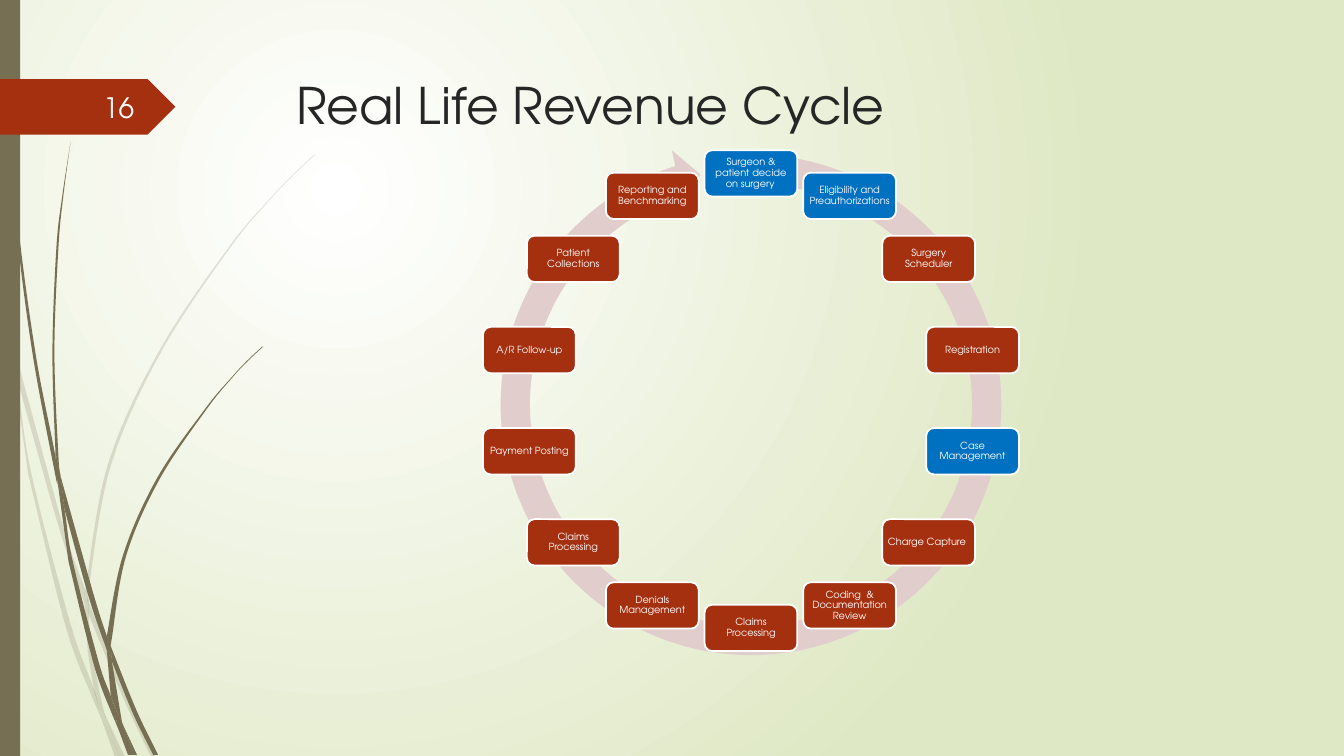
from dataclasses import dataclass
from math import cos, pi, sin

from lxml import etree
from pptx import Presentation
from pptx.dml.color import RGBColor
from pptx.enum.shapes import MSO_SHAPE
from pptx.enum.text import MSO_ANCHOR, PP_ALIGN
from pptx.oxml.ns import qn
from pptx.util import Inches, Pt

RECTANGLE, ROUNDED = MSO_SHAPE.RECTANGLE, MSO_SHAPE.ROUNDED_RECTANGLE
PENTAGON, CIRCULAR_ARROW = MSO_SHAPE.PENTAGON, MSO_SHAPE.CIRCULAR_ARROW
TOP, MIDDLE = MSO_ANCHOR.TOP, MSO_ANCHOR.MIDDLE
LEFT, CENTER, RIGHT = PP_ALIGN.LEFT, PP_ALIGN.CENTER, PP_ALIGN.RIGHT

# Every length is counted in square grid cells.
CELL = Inches(0.1)
COLUMNS, ROWS = 133.33, 75

FONT = "TeX Gyre Adventor"
OLIVE, RUST, BLUE, WHITE = "766F54", "A53010", "0070C0", "FFFFFF"
INK, PALE_ROSE, PALE_GREEN, OFF_WHITE = "262626", "E1CDCC", "DFE8C4", "FEFFFF"

CYCLE_CENTER = (74.5, 39.75)
CYCLE_RADIUS = 22.55
STEP_WIDTH, STEP_HEIGHT = 9.2, 4.6
ARROW_SIZE = 52.9
ARROW_PERCENTS = (5.5, 330.7, 15125.1, 16607.9, 5.8)

Points = tuple[tuple[float, float], ...]


@dataclass(frozen=True)
class Area:
    left: float
    top: float
    width: float
    height: float

    def emu(self) -> list[int]:
        return [cells(n) for n in (self.left, self.top, self.width, self.height)]


@dataclass(frozen=True)
class TextStyle:
    size: float
    color: str
    align: PP_ALIGN = CENTER
    anchor: MSO_ANCHOR = MIDDLE
    inset: tuple[float, float] = (1, 0.5)
    spacing: float = 1.0


@dataclass(frozen=True)
class Blade:
    """A piece of grass between two smooth edges, one out and one back."""
    out: Points
    back: Points


STEP_STYLE = TextStyle(7, WHITE, inset=(0.33, 0.3), spacing=0.9)
TITLE_STYLE = TextStyle(36, INK, LEFT, TOP)
NUMBER_STYLE = TextStyle(20, OFF_WHITE, RIGHT)

STEPS = ("Surgeon & patient decide on surgery\t", "Eligibility and Preauthorizations",
         "Surgery Scheduler", "Registration", "Case Management", "Charge Capture\t",
         "Coding  & Documentation Review", "Claims Processing", "Denials Management",
         "Claims Processing", "Payment Posting", "A/R Follow-up", "Patient Collections",
         "Reporting and Benchmarking")
BLUE_STEPS = {0, 1, 4}

FAINT_GRASS = (
    Blade(((0, 28.2), (0.9, 32.2), (1.1, 35)), ((1, 34.4), (0, 29.9))),
    Blade(((1.4, 34.5), (6.2, 52), (8.5, 58.6)), ((8.4, 59.9), (5.8, 52.2), (1.7, 37.6))),
    Blade(((8.8, 59.6), (9.2, 60.7), (12.7, 69.2), (15.5, 75.1)),
          ((15, 75.1), (12.3, 69.4), (8.8, 61))),
    Blade(((10.5, 71.1), (12.4, 75.1)), ((11.9, 75.1),)),
    Blade(((1.1, 35), (1.7, 37.6), (3.1, 46.9), (7, 61.9), (9.3, 68.3), (9.9, 70.7), (10.1, 71.4)),
          ((9.2, 69.3), (6.5, 62.1), (2.8, 47))),
    Blade(((8.4, 59.9), (8.8, 60.8), (8.8, 61), (9.1, 64.6), (10.3, 70.6), (10.5, 71.1)),
          ((9.6, 69.2), (9.3, 68.3), (8.7, 64.6))),
    Blade(((31.2, 15.3), (28.9, 17.5), (26.8, 19.7), (22.8, 24.4), (15.8, 34.8), (10.7, 46.1),
           (8.5, 58.4), (8.5, 58.6)),
          ((8.8, 59.6), (8.8, 58.4), (11, 46.2), (16, 34.9), (22.9, 24.5), (26.8, 19.8),
           (29, 17.5), (31.2, 15.4))),
    Blade(((10.1, 71.4), (11.9, 75.1)), ((11.4, 75.1),)),
    Blade(((8.5, 58.6), (8.8, 59.6), (8.8, 61)), ((8.8, 60.8), (8.4, 59.9))),
    Blade(((9.3, 68.3), (9.6, 69.2), (10.5, 71.1), (11.9, 75.1)), ((10.1, 71.4), (9.9, 70.7))),
)
SOLID_GRASS = (
    Blade(((0.4, 0), (0.5, 4.8), (0.8, 10.9), (1.9, 23.2), (3.6, 35.5), (5.5, 45.3), (5.7, 48.1)),
          ((5.6, 47.7), (3.3, 35.5), (1.7, 23.3), (0.7, 11), (0.4, 4.8), (0.3, 0))),
    Blade(((6, 47.2), (9.3, 59), (10.6, 63.1)), ((10.6, 64.5), (8.8, 59.2), (6.4, 50.5))),
    Blade(((11, 64.1), (11.3, 64.9), (13.6, 70.6), (15.7, 74.9)),
          ((15.2, 74.9), (13.2, 70.8), (11.1, 65.6))),
    Blade(((5.7, 47.7), (6.4, 50.5), (7.2, 55.6), (9.8, 65.7), (11, 69.1), (11.6, 71.7),
           (11.7, 72.2)), ((11.1, 70.8), (9.3, 65.9), (6.8, 55.7))),
    Blade(((7, 14.1), (6.3, 19.3), (5.8, 24.5), (5.4, 34.9), (5.8, 45.3), (6, 47.2)),
          ((5.5, 44.9), (5.2, 34.9), (5.6, 24.5), (6.2, 19.3), (7, 14.1))),
    Blade(((12.2, 71.9), (13.6, 74.9)), ((13.3, 74.9),)),
    Blade(((5.5, 44.9), (6, 47.2), (6.4, 50.5)), ((5.7, 47.7), (5.5, 45.3))),
    Blade(((26, 34.4), (24.5, 35.8), (23.1, 37.3), (20.4, 40.5), (15.6, 47.4), (12.2, 55.1),
           (10.6, 63.1)),
          ((11, 64.1), (11.1, 63.3), (12.5, 55.2), (15.8, 47.6), (20.5, 40.6), (23.1, 37.4),
           (24.5, 35.9), (26.1, 34.4))),
    Blade(((11.7, 72.2), (13.1, 74.9)), ((12.7, 74.9),)),
    Blade(((10.6, 64.5), (10.9, 65.1), (11.1, 65.6), (12.1, 71.6), (12.2, 71.9)),
          ((11.6, 70.6), (11, 69.1))),
    Blade(((10.6, 63.1), (11, 64.1), (11.1, 65.6)), ((10.9, 65.1), (10.6, 64.5))),
    Blade(((11, 69.1), (11.6, 70.6), (12.2, 71.9), (13.3, 74.9)),
          ((13, 74.9), (11.7, 72.2), (11.6, 71.7))),
)


def cells(count: float) -> int:
    return round(count * CELL)


def rgb(color: str) -> RGBColor:
    return RGBColor.from_string(color)


def set_all(target: object, values: dict) -> None:
    for name, value in values.items():
        setattr(target, name, value)


def paint(shape, fill: str, line: str | None = None) -> None:
    shape.shadow.inherit = False
    shape.fill.solid()
    shape.fill.fore_color.rgb = rgb(fill)
    if line is None:
        shape.line.fill.background()
    else:
        shape.line.color.rgb = rgb(line)
        shape.line.width = Pt(1.25)


def write(shape, text: str, style: TextStyle) -> None:
    side, edge = (cells(n) for n in style.inset)
    frame = shape.text_frame
    set_all(frame, {"word_wrap": True, "vertical_anchor": style.anchor, "margin_left": side,
                    "margin_right": side, "margin_top": edge, "margin_bottom": edge})
    para = frame.paragraphs[0]
    set_all(para, {"alignment": style.align, "line_spacing": style.spacing})
    span = para.add_run()
    span.text = text
    set_all(span.font, {"name": FONT, "size": Pt(style.size)})
    span.font.color.rgb = rgb(style.color)


def add_block(page, kind: MSO_SHAPE, area: Area, fill: str, line: str | None = None):
    block = page.shapes.add_shape(kind, *area.emu())
    paint(block, fill, line)
    return block


def bend(lines: list, knots: list[tuple[int, int]]) -> None:
    """Turn the straight lines between the knots into Catmull-Rom curves."""
    ends = [knots[0], *knots, knots[-1]]
    for line, a, b, c, d in zip(lines, ends, ends[1:], ends[2:], ends[3:]):
        line.tag = qn("a:cubicBezTo")
        handles = ([q + (r - p) / 6 for p, q, r in zip(a, b, c)],
                   [r - (s - q) / 6 for q, r, s in zip(b, c, d)])
        for place, (x, y) in enumerate(handles):
            line.insert(place, line.makeelement(qn("a:pt"), {"x": str(round(x)), "y": str(round(y))}))


def add_blade(page, blade: Blade, opacity: int) -> None:
    corners = [(cells(x), cells(y)) for x, y in blade.out + blade.back]
    builder = page.shapes.build_freeform(*corners[0])
    builder.add_line_segments(corners[1:], close=True)
    shape = builder.convert_to_shape()
    paint(shape, OLIVE)
    color = shape._element.spPr.find(f"{qn('a:solidFill')}/{qn('a:srgbClr')}")
    etree.SubElement(color, qn("a:alpha"), val=str(opacity * 1000))
    knots = [(int(pt.get("x")), int(pt.get("y"))) for pt in shape._element.iter(qn("a:pt"))]
    lines = list(shape._element.iter(qn("a:lnTo")))
    turn = len(blade.out)
    bend(lines[:turn - 1], knots[:turn])
    bend(lines[turn:], knots[turn:len(corners)])


def set_background(page) -> None:
    fill = page.background.fill
    fill.gradient()
    for stop, color in zip(fill.gradient_stops, (WHITE, PALE_GREEN)):
        stop.color.rgb = rgb(color)
    gradient = page._element.find(f".//{qn('a:gradFill')}")
    glow = etree.Element(qn("a:path"), path="circle")
    etree.SubElement(glow, qn("a:fillToRect"), l="50000", t="50000", r="100000", b="100000")
    gradient.replace(gradient.find(qn("a:lin")), glow)


def add_cycle(page) -> None:
    x, y = CYCLE_CENTER
    half = ARROW_SIZE / 2
    ring = Area(x - half, y + 0.4 - half, ARROW_SIZE, ARROW_SIZE)
    arrow = add_block(page, CIRCULAR_ARROW, ring, PALE_ROSE)
    for index, percent in enumerate(ARROW_PERCENTS):
        arrow.adjustments[index] = percent / 100
    for index, label in enumerate(STEPS):
        angle = 2 * pi * index / len(STEPS)
        area = Area(x + CYCLE_RADIUS * sin(angle) - STEP_WIDTH / 2,
                    y - CYCLE_RADIUS * cos(angle) - STEP_HEIGHT / 2, STEP_WIDTH, STEP_HEIGHT)
        color = BLUE if index in BLUE_STEPS else RUST
        write(add_block(page, ROUNDED, area, color, WHITE), label, STEP_STYLE)


def main() -> None:
    deck = Presentation()
    set_all(deck, {"slide_width": cells(COLUMNS), "slide_height": cells(ROWS)})
    page = deck.slides.add_slide(deck.slide_layouts[6])
    set_background(page)
    for grass, opacity in ((FAINT_GRASS, 20), (SOLID_GRASS, 100)):
        for blade in grass:
            add_blade(page, blade, opacity)
    add_block(page, RECTANGLE, Area(0, 0, 2, ROWS), OLIVE)
    add_block(page, PENTAGON, Area(0, 7.85, 17.4, 5.5), RUST)
    for area, text, style in ((Area(28.4, 6.9, 97.5, 8), "Real Life Revenue Cycle", TITLE_STYLE),
                              (Area(5.8, 8.6, 8.5, 4), "16", NUMBER_STYLE)):
        write(page.shapes.add_textbox(*area.emu()), text, style)
    add_cycle(page)
    deck.save("out.pptx")


if __name__ == "__main__":
    main()
